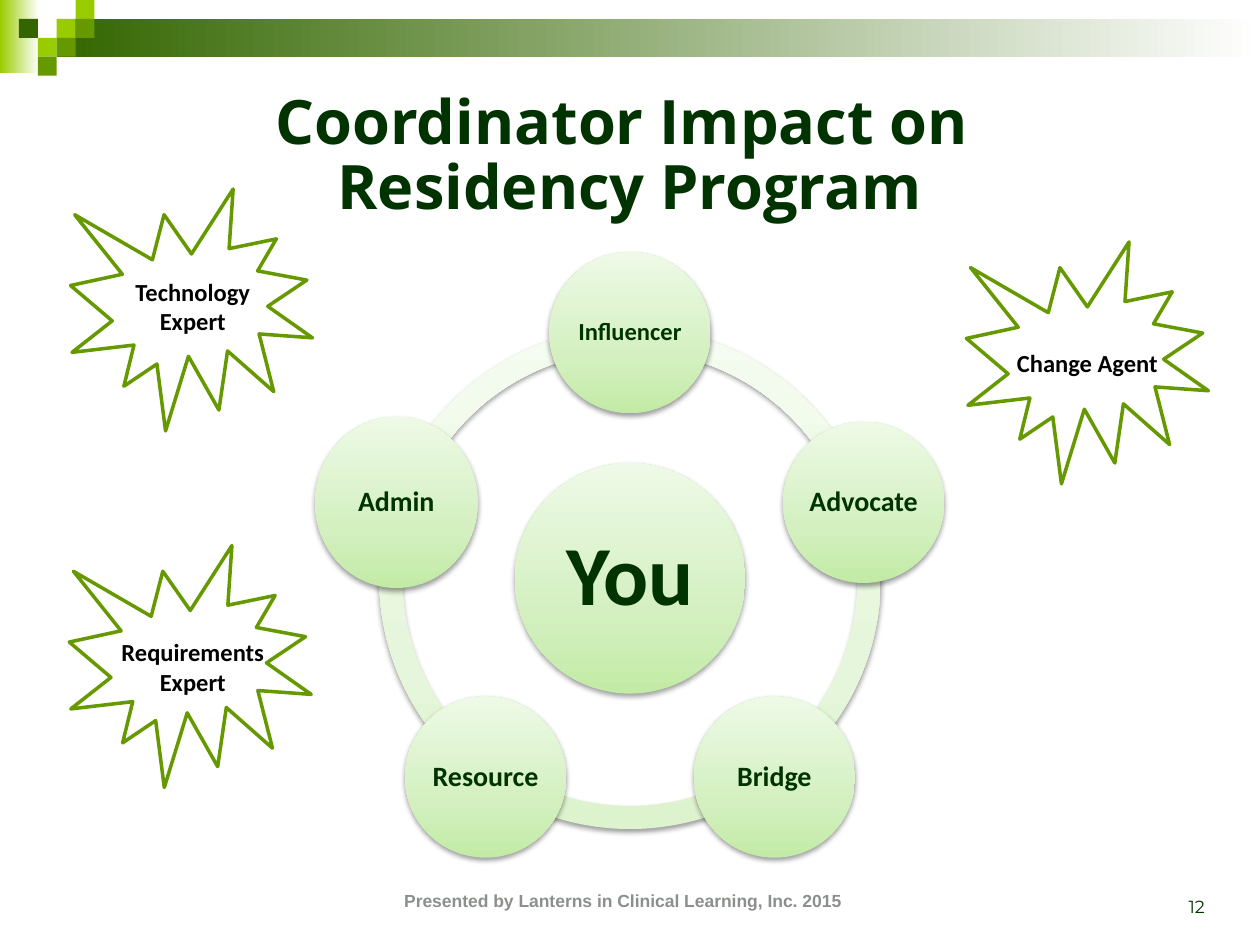
from dataclasses import dataclass
from math import cos, radians, sin

from lxml.etree import SubElement
from pptx import Presentation
from pptx.dml.color import RGBColor
from pptx.enum.shapes import MSO_SHAPE
from pptx.enum.text import MSO_ANCHOR, PP_ALIGN
from pptx.oxml.ns import qn
from pptx.util import Inches, Pt

COLS, ROWS = 100, 75
CELL = Inches(0.1)
SQUARE = 1.5
CENTER_X, CENTER_Y, ORBIT = 50, 45.9, 19.5


@dataclass(frozen=True)
class Theme:
    """Colours, fonts and type sizes of the slide."""
    ink: str = "003300"
    black: str = "000000"
    white: str = "FFFFFF"
    muted: str = "8C908C"
    lime: str = "99CC00"
    green: str = "669900"
    forest: str = "336600"
    ring: tuple = ((0, "DDF3CE"), (35, "E6F6DC"), (100, "F5FCF1"))
    disc: tuple = ((0, "C2EBA5"), (35, "D4F0C1"), (100, "EEFAE7"))
    head: str = "Open Sans"
    body: str = "Calibri"
    foot: str = "Arial"
    number: str = "Montserrat"
    title_size: int = 35
    hub_size: int = 48
    node_size: int = 16
    label_size: int = 14
    foot_size: int = 10


T = Theme()


def grid(*cells):
    """Convert columns and rows to slide lengths."""
    return [int(c * CELL) for c in cells]


def around(x, y, w, h):
    """Return the grid box of the given size centred on a point."""
    return x - w / 2, y - h / 2, w, h


def add_run(p, text, size, color=T.ink, font=T.body, bold=True):
    """Add one formatted run to a paragraph."""
    r = p.add_run()
    r.text = text
    r.font.size, r.font.name, r.font.bold = Pt(size), font, bold
    r.font.color.rgb = RGBColor.from_string(color)


def add_plain(s, kind, box, color=None):
    """Add a shape without line or shadow, filled if a colour is given."""
    sp = s.shapes.add_shape(kind, *grid(*box))
    sp.shadow.inherit = False
    sp.line.fill.background()
    if color:
        sp.fill.solid()
        sp.fill.fore_color.rgb = RGBColor.from_string(color)
    return sp


def set_gradient(sp, stops, angle):
    """Fill a shape with a linear gradient of any number of stops."""
    sp.fill.gradient()
    sp.fill.gradient_angle = angle
    gs_list = next(sp.element.spPr.iter(qn("a:gsLst")))
    gs_list.clear()
    for pos, color in stops:
        gs = SubElement(gs_list, qn("a:gs"), pos=str(pos * 1000))
        SubElement(gs, qn("a:srgbClr"), val=color)


def set_shadow(sp):
    """Give a shape a soft shadow that falls straight down."""
    effects = sp.element.spPr.find(qn("a:effectLst"))
    shadow = SubElement(effects, qn("a:outerShdw"), blurRad=str(Pt(3.1)),
                        dist=str(Pt(1.6)), dir="5400000", rotWithShape="0")
    color = SubElement(shadow, qn("a:srgbClr"), val=T.black)
    SubElement(color, qn("a:alpha"), val="38000")


def add_text(s, box, text, size, align=PP_ALIGN.CENTER,
             anchor=MSO_ANCHOR.TOP, **style):
    """Add a wrapped text box with one run."""
    tf = s.shapes.add_textbox(*grid(*box)).text_frame
    tf.word_wrap, tf.vertical_anchor = True, anchor
    p = tf.paragraphs[0]
    p.alignment = align
    add_run(p, text, size, **style)


def add_corner(s):
    """Add the header band and the checkered corner."""
    bands = [((0, 0, 3.1, 5.8), T.lime), ((4.5, 1.5, 95.5, 3), T.forest)]
    for box, color in bands:
        sp = add_plain(s, MSO_SHAPE.RECTANGLE, box)
        set_gradient(sp, ((0, color), (100, T.white)), 0)
    squares = [(3, 1, T.lime), (4, 0, T.lime), (4, 1, T.green),
               (2, 2, T.lime), (1, 1, T.forest), (3, 2, T.green),
               (2, 3, T.green)]
    for col, row, color in squares:
        box = col * SQUARE, row * SQUARE, SQUARE, SQUARE
        add_plain(s, MSO_SHAPE.RECTANGLE, box, color)


def add_title(s, lines):
    """Place the title and break it into lines."""
    sp = s.shapes.title
    sp.left, sp.top, sp.width, sp.height = grid(5, 5, 90, 15)
    tf = sp.text_frame
    tf.vertical_anchor = MSO_ANCHOR.MIDDLE
    p = tf.paragraphs[0]
    p.alignment, p.line_spacing = PP_ALIGN.CENTER, 0.88
    for i, line in enumerate(lines):
        if i:
            p.add_line_break()
        add_run(p, line, T.title_size, font=T.head)


def add_arc(s, start, sweep):
    """Add one segment of the ring, with angles in degrees."""
    box = around(CENTER_X, CENTER_Y, 39.8, 39.8)
    sp = add_plain(s, MSO_SHAPE.BLOCK_ARC, box)
    angles = start % 360, (start + sweep) % 360
    for i, angle in enumerate(angles):
        sp.adjustments[i] = angle * 0.6
    sp.adjustments[2] = 0.046
    set_gradient(sp, T.ring, 90)
    set_shadow(sp)


def add_disc(s, box, text, size, inset=0.2):
    """Add a shaded circle with a centred word."""
    sp = add_plain(s, MSO_SHAPE.OVAL, box)
    set_gradient(sp, T.disc, 90)
    set_shadow(sp)
    tf = sp.text_frame
    tf.word_wrap, tf.vertical_anchor = True, MSO_ANCHOR.MIDDLE
    (tf.margin_left, tf.margin_top,
     tf.margin_right, tf.margin_bottom) = grid(*[inset] * 4)
    p = tf.paragraphs[0]
    p.alignment, p.line_spacing = PP_ALIGN.CENTER, 0.9
    add_run(p, text, size)


def add_cycle(s, hub, nodes):
    """Add the ring, the hub and evenly spaced nodes, clockwise from the top."""
    step = 360 / len(nodes)
    for i in range(len(nodes)):
        add_arc(s, 198 - i * step, step)
    add_disc(s, around(CENTER_X, CENTER_Y, 18.3, 18.3), hub, T.hub_size, 0.7)
    for i, (text, size, w, h) in enumerate(nodes):
        angle = radians(i * step - 90)
        x = CENTER_X + ORBIT * cos(angle)
        y = CENTER_Y + ORBIT * sin(angle)
        add_disc(s, around(x, y, w, h), text, size)


def add_burst(s, left, top, text, label_box):
    """Add an outlined burst and its label."""
    box = left, top, 19.2, 19.2
    sp = add_plain(s, MSO_SHAPE.EXPLOSION1, box, T.white)
    sp.line.color.rgb = RGBColor.from_string(T.green)
    sp.line.width = Pt(2)
    add_text(s, label_box, text, T.label_size, color=T.black)


def main():
    """Build and save the slide."""
    prs = Presentation()
    prs.slide_width, prs.slide_height = grid(COLS, ROWS)
    s = prs.slides.add_slide(prs.slide_layouts[5])
    add_corner(s)
    add_title(s, ["Coordinator Impact on ", "Residency Program"])
    add_cycle(s, "You ", [
        ("Influencer", T.label_size, 12.8, 12.8),
        ("Advocate", T.node_size, 12.8, 12.8),
        ("Bridge", T.node_size, 12.8, 12.8),
        ("Resource", T.node_size, 12.8, 12.8),
        ("Admin", T.node_size, 12.9, 13.6),
    ])
    add_text(s, (30, 70, 39.2, 3),
             "Presented by Lanterns in Clinical Learning, Inc. 2015 ",
             T.foot_size, anchor=MSO_ANCHOR.MIDDLE, color=T.muted, font=T.foot)
    add_text(s, (73.3, 68.3, 23.3, 5), "12", T.foot_size, PP_ALIGN.RIGHT,
             MSO_ANCHOR.BOTTOM, font=T.number, bold=False)
    add_burst(s, 5.6, 15, "Technology Expert", (8.2, 21.5, 14.2, 5.7))
    add_burst(s, 5.5, 43.3, "Requirements Expert", (8.2, 50.1, 14.2, 5.7))
    add_burst(s, 76.7, 19.2, "Change Agent", (79.2, 27.1, 14.2, 3.4))
    prs.save("out.pptx")


if __name__ == "__main__":
    main()
